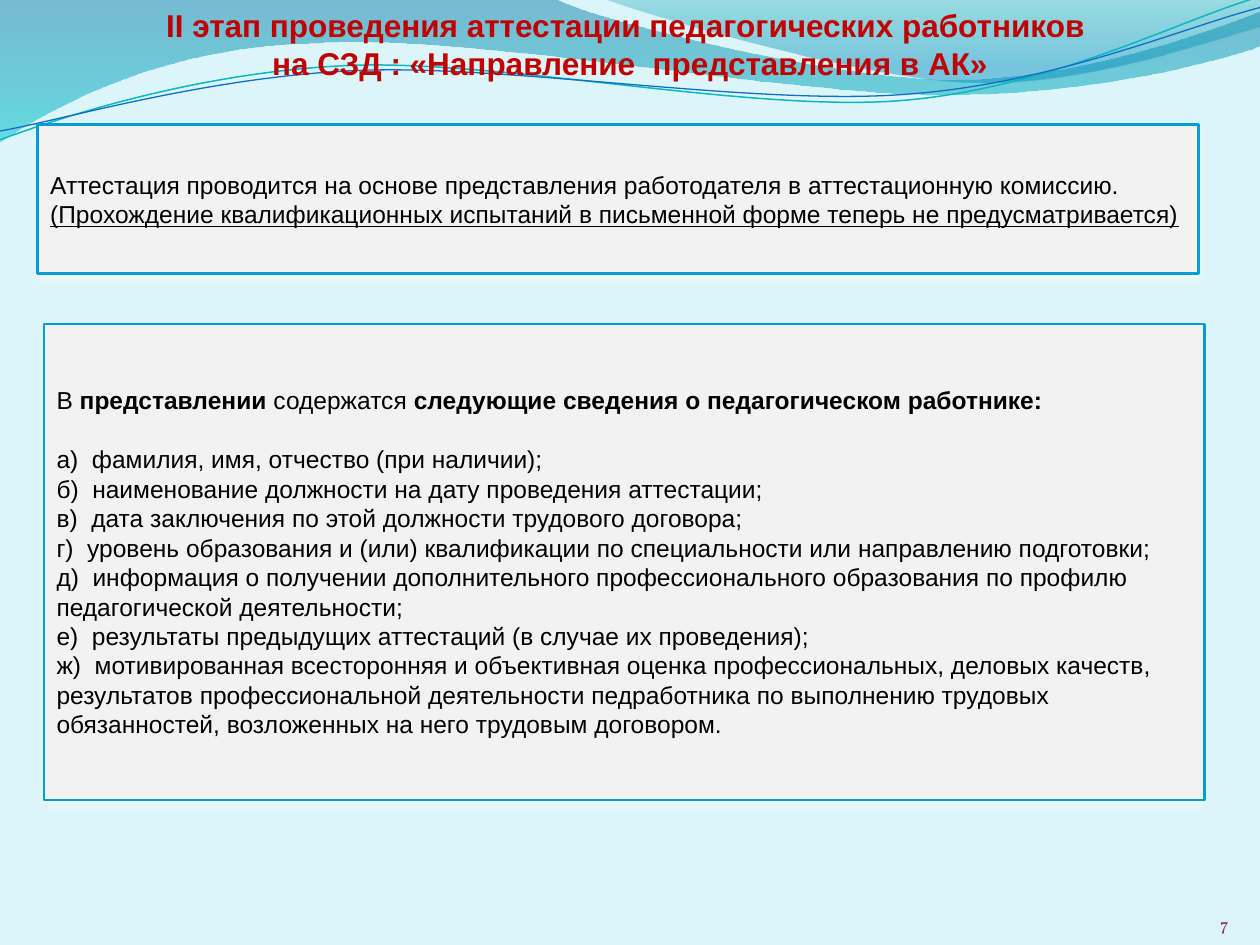
import math

from lxml import etree
from pptx import Presentation
from pptx.dml.color import RGBColor
from pptx.enum.shapes import MSO_SHAPE
from pptx.enum.text import MSO_ANCHOR, PP_ALIGN
from pptx.oxml.ns import qn
from pptx.util import Inches, Pt

RECTANGLE = MSO_SHAPE.RECTANGLE
TOP, MIDDLE, BOTTOM = MSO_ANCHOR.TOP, MSO_ANCHOR.MIDDLE, MSO_ANCHOR.BOTTOM
LEFT, CENTER, RIGHT, JUSTIFY = PP_ALIGN.LEFT, PP_ALIGN.CENTER, PP_ALIGN.RIGHT, PP_ALIGN.JUSTIFY

PALE_AQUA = RGBColor(0xDB, 0xF5, 0xF9)
DEEP_BLUE = RGBColor(0x00, 0x74, 0xA1)
CYAN = RGBColor(0x00, 0xC6, 0xCF)
TEAL = RGBColor(0x00, 0xA1, 0xA9)
OCEAN = RGBColor(0x00, 0x8B, 0xBF)
TEAL_LINE = RGBColor(0x0A, 0xB8, 0xBF)
BLUE_LINE = RGBColor(0x0F, 0x6F, 0xC6)
PANEL_FILL = RGBColor(0xF2, 0xF2, 0xF2)
PANEL_LINE = RGBColor(0x00, 0x9D, 0xD9)
RED = RGBColor(0xC0, 0x00, 0x00)
BLACK = RGBColor(0x00, 0x00, 0x00)
PLUM = RGBColor(0x83, 0x2F, 0x72)
WHITE = RGBColor(0xFF, 0xFF, 0xFF)

TITLE_FONT = {"name": "Arial", "size": Pt(18), "bold": True}
BODY_FONT = {"name": "Arial", "size": Pt(14), "bold": False}
NUMBER_FONT = {"name": "Vollkorn", "size": Pt(10)}
STRAND_TILT = 357.3

BROAD_WAVE = [
    (0, 0), (4.4, -0.01),
    (4.76, 0.17, 6.64, 0.63, 7.58, 0.63), (8.53, 0.63, 9.58, 0.26, 10, 0.09),
    (10.01, 0.36),
    (9.83, 0.44, 8.7, 0.76, 7.46, 0.75), (6.22, 0.75, 3.82, 0.28, 2.57, 0.34),
    (1.29, 0.36, 0.46, 0.83, -0.01, 1.13), (0, 0),
]
CORNER_WAVE = [
    (4.79, -0.01),
    (5.09, 0.11, 6.82, 0.62, 7.69, 0.65), (8.56, 0.69, 9.61, 0.32, 10, 0.21),
    (10, 0), (4.79, -0.01),
]
TEAL_STRAND = [
    (0, 1.11),
    (0.48, 0.93, 1.58, 0.57, 2.77, 0.52), (3.95, 0.47, 5.93, 0.89, 7.13, 0.8),
    (8.33, 0.71, 9.38, 0.15, 9.98, -0.02),
]
BLUE_STRAND = [
    (0, 1.04),
    (0.47, 0.96, 1.64, 0.61, 2.83, 0.56), (4.03, 0.51, 5.97, 0.84, 7.17, 0.75),
    (8.36, 0.67, 9.41, 0.21, 10, 0.06),
]

TITLE = [
    [("II этап проведения аттестации педагогических работников ", {})],
    [("на СЗД : «Направление  представления в АК»", {})],
]
BASIS = [
    [("Аттестация проводится на основе представления работодателя в аттестационную комиссию.", {})],
    [("(Прохождение квалификационных испытаний в письменной форме теперь не предусматривается)",
      {"underline": True})],
]
DETAILS_LEAD = [
    ("В ", {}), ("представлении ", {"bold": True}), ("содержатся ", {}),
    ("следующие сведения о педагогическом работнике:", {"bold": True}),
]
DETAILS_ITEMS = [
    "а)  фамилия, имя, отчество (при наличии);",
    "б)  наименование должности на дату проведения аттестации;",
    "в)  дата заключения по этой должности трудового договора;",
    "г)  уровень образования и (или) квалификации по специальности или направлению подготовки;",
    "д)  информация о получении дополнительного профессионального образования по профилю "
    "педагогической деятельности;",
    "е)  результаты предыдущих аттестаций (в случае их проведения);",
    "ж)  мотивированная всесторонняя и объективная оценка профессиональных, деловых качеств, "
    "результатов профессиональной деятельности педработника по выполнению трудовых "
    "обязанностей, возложенных на него трудовым договором.",
]
DETAILS = [DETAILS_LEAD] + [[(item, {})] for item in DETAILS_ITEMS]


def pair_points(step, tilt, center):
    """Return the points of a step, turned back by the tilt, as lengths."""
    angle = math.radians(-tilt)
    cos, sin = math.cos(angle), math.sin(angle)
    points = []
    for x, y in zip(step[::2], step[1::2]):
        dx, dy = x - center[0], y - center[1]
        points.append((Inches(center[0] + dx * cos - dy * sin),
                       Inches(center[1] + dx * sin + dy * cos)))
    return points


def add_outline(page, steps, closed, tilt=0, center=(0, 0)):
    """Draw an outline of lines and cubic curves and return it."""
    start, *sections = [pair_points(step, tilt, center) for step in steps]
    builder = page.shapes.build_freeform(*start[0])
    builder.add_line_segments([points[-1] for points in sections], close=closed)
    outline = builder.convert_to_shape()
    outline.shadow.inherit = False
    lines = list(outline.element.iter(qn("a:lnTo")))
    for line, points in zip(lines, sections):
        if len(points) == 3:
            curve = etree.Element(qn("a:cubicBezTo"))
            for x, y in points:
                etree.SubElement(curve, qn("a:pt"), x=str(x - outline.left), y=str(y - outline.top))
            line.getparent().replace(line, curve)
    outline.rotation = tilt
    return outline


def add_wave(page, steps, stops):
    """Add a translucent wave shaded from top to bottom."""
    wave = add_outline(page, steps, True)
    wave.line.fill.background()
    wave.fill.gradient()
    wave.fill.gradient_angle = 270
    for stop, (position, color, _) in zip(wave.fill.gradient_stops, stops):
        stop.position = position
        stop.color.rgb = color
    for tint, (_, _, opacity) in zip(wave.element.spPr.iter(qn("a:srgbClr")), stops):
        etree.SubElement(tint, qn("a:alpha"), val=str(opacity * 1000))


def add_strand(page, steps, center, color, width):
    """Add a thin tilted curve."""
    strand = add_outline(page, steps, False, STRAND_TILT, center)
    strand.fill.background()
    strand.line.color.rgb = color
    strand.line.width = Pt(width)


def add_header_waves(page):
    """Draw the decorative waves along the top of the page."""
    add_wave(page, BROAD_WAVE, [(0, DEEP_BLUE, 45), (1, CYAN, 55)])
    add_wave(page, CORNER_WAVE, [(0, TEAL, 30), (0.8, OCEAN, 45)])
    add_strand(page, TEAL_STRAND, (4.99, 0.58), TEAL_LINE, 0.85)
    add_strand(page, BLUE_STRAND, (5, 0.59), BLUE_LINE, 0.75)


def write_text(box, paragraphs, font, color, align, anchor):
    """Fill a box with paragraphs of formatted spans and return its text frame."""
    frame = box.text_frame
    frame.word_wrap = True
    frame.vertical_anchor = anchor
    for index, spans in enumerate(paragraphs):
        para = frame.add_paragraph() if index else frame.paragraphs[0]
        para.alignment = align
        for text, extra in spans:
            span = para.add_run()
            span.text = text
            span.font.color.rgb = color
            for key, value in {**font, **extra}.items():
                setattr(span.font, key, value)
    return frame


def add_label(page, bounds, paragraphs, font, color, align, anchor):
    """Add a plain text box and return its text frame."""
    box = page.shapes.add_textbox(*map(Inches, bounds))
    return write_text(box, paragraphs, font, color, align, anchor)


def add_panel(page, bounds, paragraphs, align):
    """Add a framed panel with a soft light shadow and return its text frame."""
    panel = page.shapes.add_shape(RECTANGLE, *map(Inches, bounds))
    panel.shadow.inherit = False
    panel.fill.solid()
    panel.fill.fore_color.rgb = PANEL_FILL
    panel.line.color.rgb = PANEL_LINE
    panel.line.width = Pt(1.5)
    effects = panel.element.spPr.find(qn("a:effectLst"))
    shadow = etree.SubElement(effects, qn("a:outerShdw"), blurRad=str(Pt(4.5)),
                              dist=str(Pt(3)), dir="5400000", rotWithShape="0")
    tint = etree.SubElement(shadow, qn("a:srgbClr"), val=str(WHITE))
    etree.SubElement(tint, qn("a:alpha"), val="48000")
    return write_text(panel, paragraphs, BODY_FONT, BLACK, align, MIDDLE)


def main():
    """Build the slide and save the deck."""
    deck = Presentation()
    deck.slide_width, deck.slide_height = Inches(10), Inches(7.5)
    page = deck.slides.add_slide(deck.slide_layouts[6])
    page.background.fill.solid()
    page.background.fill.fore_color.rgb = PALE_AQUA
    add_header_waves(page)
    number = add_label(page, (8.92, 7.02, 0.83, 0.4), [[("7", {})]],
                       NUMBER_FONT, PLUM, RIGHT, BOTTOM)
    for side in ("left", "top", "right", "bottom"):
        setattr(number, f"margin_{side}", 0)
    add_label(page, (0, 0, 10, 0.71), TITLE, TITLE_FONT, RED, CENTER, TOP)
    add_panel(page, (0.3, 0.99, 9.21, 1.18), BASIS, JUSTIFY)
    details = add_panel(page, (0.35, 2.57, 9.21, 3.78), DETAILS, LEFT)
    details.paragraphs[1].space_before = Pt(17)
    deck.save("out.pptx")


if __name__ == "__main__":
    main()
